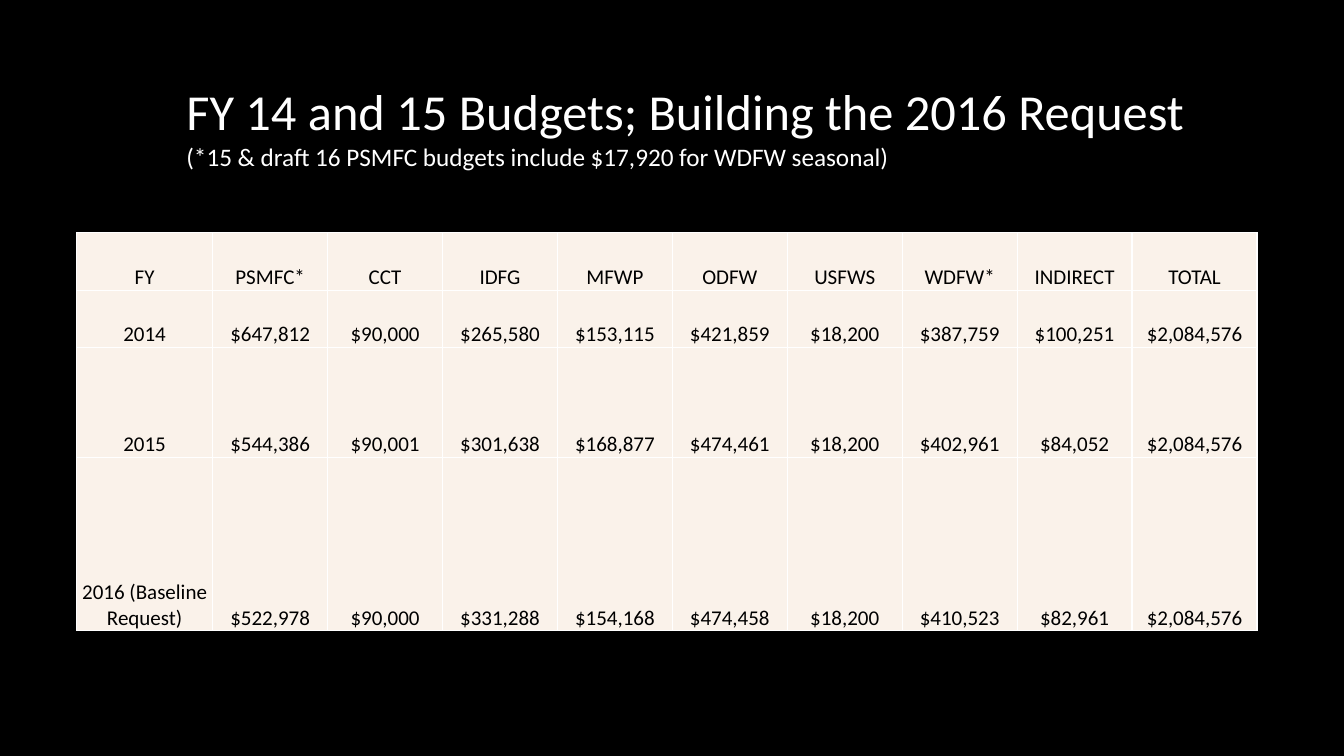
from dataclasses import dataclass

from lxml.etree import SubElement
from pptx import Presentation
from pptx.dml.color import RGBColor
from pptx.enum.text import MSO_ANCHOR, MSO_AUTO_SIZE, PP_ALIGN
from pptx.oxml.ns import qn
from pptx.util import Inches, Pt


@dataclass(frozen=True)
class Theme:
    """Colours, font and type sizes of the slide."""
    background: str = "000000"
    light: str = "FFFFFF"
    dark: str = "000000"
    cell: str = "FAF2EA"
    font: str = "Calibri"
    title: int = 36
    note: int = 18
    body: int = 15


def write(paragraph, text, *, font, size, color, align=PP_ALIGN.LEFT):
    """Put formatted text into a paragraph."""
    paragraph.alignment = align
    run = paragraph.add_run()
    run.text = text
    run.font.name = font
    run.font.size = Pt(size)
    run.font.bold = False
    run.font.color.rgb = RGBColor.from_string(color)


class BudgetSlide:
    """Hold the theme and the current slide."""

    def __init__(self, presentation, theme):
        """Add a blank slide with the theme background."""
        self.theme = theme
        self.slide = presentation.slides.add_slide(presentation.slide_layouts[6])
        background = self.slide.background.fill
        background.solid()
        background.fore_color.rgb = RGBColor.from_string(theme.background)

    def heading(self, title, note, left, top, width, height):
        """Add the title with its note below."""
        box = self.slide.shapes.add_textbox(
            Inches(left), Inches(top), Inches(width), Inches(height))
        frame = box.text_frame
        frame.word_wrap = False
        frame.auto_size = MSO_AUTO_SIZE.NONE
        style = {"font": self.theme.font, "color": self.theme.light}
        write(frame.paragraphs[0], title, size=self.theme.title, **style)
        write(frame.add_paragraph(), note, size=self.theme.note, **style)

    def border(self, cell):
        """Draw thin light lines on all sides of a cell."""
        properties = cell._tc.get_or_add_tcPr()
        for side in ("a:lnL", "a:lnR", "a:lnT", "a:lnB"):
            line = SubElement(properties, qn(side), w=str(Pt(1)))
            fill = SubElement(line, qn("a:solidFill"))
            SubElement(fill, qn("a:srgbClr"), val=self.theme.light)

    def cell(self, cell, text):
        """Style and fill in one table cell."""
        self.border(cell)
        cell.fill.solid()
        cell.fill.fore_color.rgb = RGBColor.from_string(self.theme.cell)
        cell.vertical_anchor = MSO_ANCHOR.BOTTOM
        cell.margin_left = cell.margin_right = cell.margin_top = Inches(0.01)
        cell.margin_bottom = Inches(0)
        write(cell.text_frame.paragraphs[0], text, font=self.theme.font,
              size=self.theme.body, color=self.theme.dark, align=PP_ALIGN.CENTER)

    def table(self, rows, left, top, widths, heights):
        """Add the table of budgets."""
        budgets = self.slide.shapes.add_table(
            len(heights), len(widths), Inches(left), Inches(top),
            Inches(sum(widths)), Inches(sum(heights))).table
        budgets.first_row = budgets.horz_banding = False
        for column, width in zip(budgets.columns, widths):
            column.width = Inches(width)
        for row, height, texts in zip(budgets.rows, heights, rows):
            row.height = Inches(height)
            for cell, text in zip(row.cells, texts):
                self.cell(cell, text)


BUDGETS = [
    ("FY", "PSMFC*", "CCT", "IDFG", "MFWP", "ODFW", "USFWS", "WDFW*",
     "INDIRECT", "TOTAL"),
    ("2014", "$647,812", "$90,000", "$265,580", "$153,115", "$421,859",
     "$18,200", "$387,759", "$100,251", "$2,084,576"),
    ("2015", "$544,386", "$90,001", "$301,638", "$168,877", "$474,461",
     "$18,200", "$402,961", "$84,052", "$2,084,576"),
    ("2016 (Baseline Request)", "$522,978", "$90,000", "$331,288", "$154,168",
     "$474,458", "$18,200", "$410,523", "$82,961", "$2,084,576"),
]


def main():
    """Build and save the budget slide."""
    presentation = Presentation()
    presentation.slide_width = Inches(13.33)
    presentation.slide_height = Inches(7.5)
    budget = BudgetSlide(presentation, Theme())
    budget.heading("FY 14 and 15 Budgets; Building the 2016 Request",
                   "(*15 & draft 16 PSMFC budgets include $17,920 for WDFW seasonal)",
                   1.75, 0.75, 10.19, 1.31)
    budget.table(BUDGETS, 0.76, 2.31, [1.35] + [1.14] * 8 + [1.24],
                 [0.57, 0.57, 1.09, 1.72])
    presentation.save("out.pptx")


if __name__ == "__main__":
    main()
